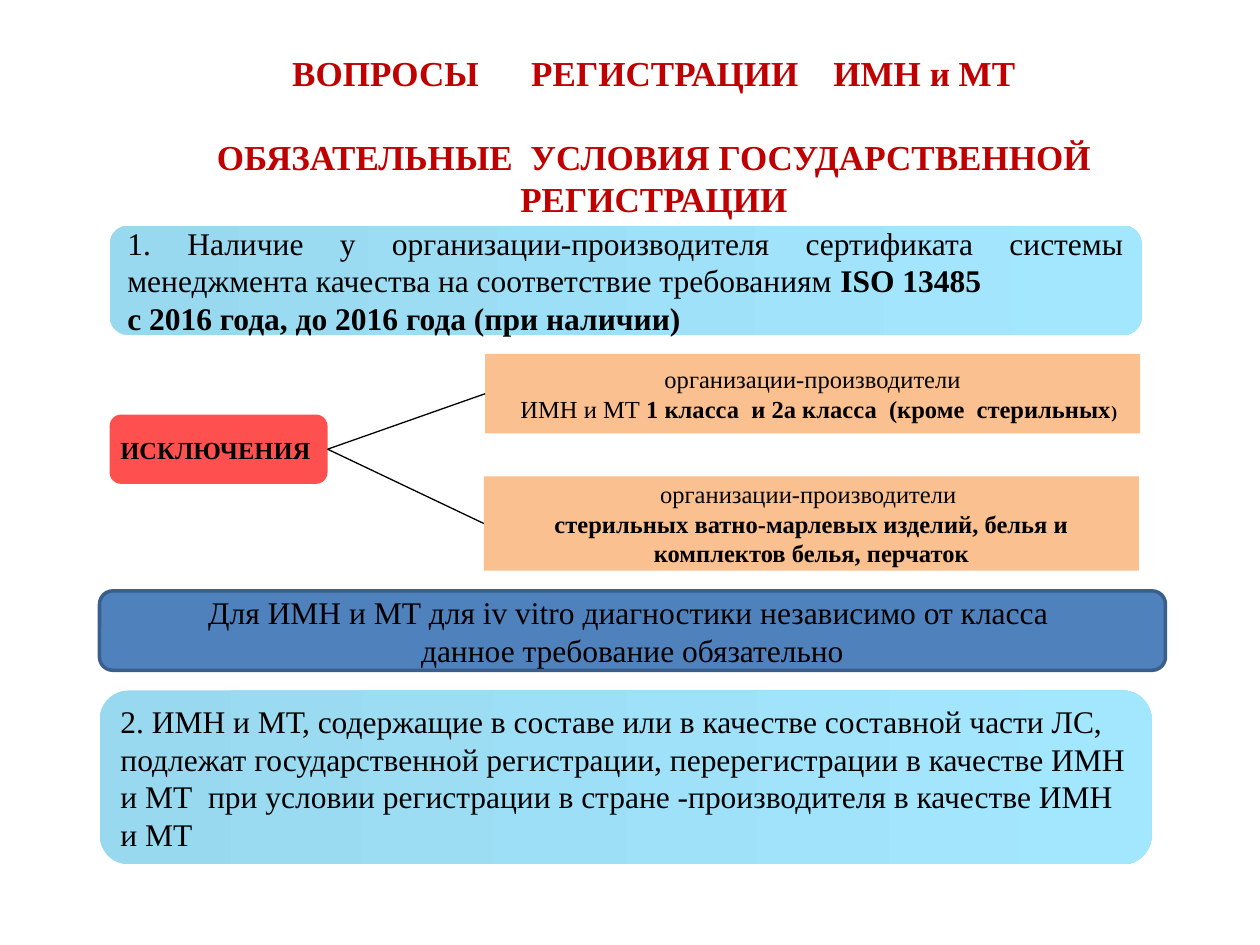
import pptx
import pptx.util
import pptx.dml.color
import pptx.enum.shapes
import pptx.enum.text
import pptx.oxml.ns
import lxml.etree

Inches, Pt = pptx.util.Inches, pptx.util.Pt
RGBColor = pptx.dml.color.RGBColor
MSO_SHAPE = pptx.enum.shapes.MSO_SHAPE
PP_ALIGN = pptx.enum.text.PP_ALIGN
MSO_ANCHOR = pptx.enum.text.MSO_ANCHOR

FONT = "Times New Roman"
BLACK = RGBColor(0x00, 0x00, 0x00)
DARK_RED = RGBColor(0xC0, 0x00, 0x00)
RED = RGBColor(0xFF, 0x50, 0x50)
PEACH = RGBColor(0xFA, 0xC0, 0x90)
BLUE = RGBColor(0x4F, 0x81, 0xBD)
BLUE_LINE = RGBColor(0x3A, 0x5F, 0x8C)
SKY = [RGBColor(0x99, 0xD9, 0xEF), RGBColor(0xA3, 0xE7, 0xFF)]


def write(tf, paragraphs, size, color, align):
    tf.vertical_anchor = MSO_ANCHOR.MIDDLE
    for i, runs in enumerate(paragraphs):
        p = tf.paragraphs[0] if i == 0 else tf.add_paragraph()
        p.alignment = align
        p.font.name = FONT
        p.font.size = Pt(size)
        p.font.color.rgb = color
        for text, bold in runs:
            r = p.add_run()
            r.text = text
            r.font.bold = bold


def add_box(kind, box, fill, paragraphs, size, align=PP_ALIGN.CENTER):
    sp = s.shapes.add_shape(kind, *[Inches(v) for v in box])
    sp.shadow.inherit = False
    sp.line.fill.background()
    if isinstance(fill, list):
        sp.fill.gradient()
        sp.fill.gradient_angle = 0
        for stop, position, color in zip(sp.fill.gradient_stops, (0, 1), fill):
            stop.position = position
            stop.color.rgb = color
    else:
        sp.fill.solid()
        sp.fill.fore_color.rgb = fill
    sp.text_frame.word_wrap = True
    write(sp.text_frame, paragraphs, size, BLACK, align)
    return sp


prs = pptx.Presentation()
prs.slide_width, prs.slide_height = Inches(10), Inches(7.5)
s = prs.slides.add_slide(prs.slide_layouts[5])

title = s.shapes.title
title.left, title.top = Inches(0.86), Inches(0.21)
title.width, title.height = Inches(8.66), Inches(1.73)
tf = title.text_frame
tf.auto_size = pptx.enum.text.MSO_AUTO_SIZE.NONE
write(tf, [
    [("ВОПРОСЫ      РЕГИСТРАЦИИ    ИМН и МТ", True)],
    [("ОБЯЗАТЕЛЬНЫЕ  УСЛОВИЯ ГОСУДАРСТВЕННОЙ РЕГИСТРАЦИИ", True)],
], 20, DARK_RED, PP_ALIGN.CENTER)
tf.paragraphs[0].space_before = Pt(0)
tf.paragraphs[1].space_before = Pt(24)

add_box(MSO_SHAPE.ROUNDED_RECTANGLE, (0.87, 1.79, 8.19, 0.87), SKY, [
    [("1. Наличие у организации-производителя сертификата системы "
      "менеджмента качества на соответствие требованиям ", False),
     ("ISO 13485", True)],
    [("с 2016 года, до 2016 года (при наличии)", True)],
], 18, PP_ALIGN.JUSTIFY)

exceptions = add_box(MSO_SHAPE.ROUNDED_RECTANGLE, (0.87, 3.29, 1.73, 0.55), RED,
                     [[("ИСКЛЮЧЕНИЯ ", True)]], 14)
exceptions.text_frame.word_wrap = False

low_class = add_box(MSO_SHAPE.RECTANGLE, (3.85, 2.81, 5.2, 0.63), PEACH, [
    [("организации-производители", False)],
    [("  ИМН и МТ ", False),
     ("1 класса  и 2а класса  (кроме  стерильных", True), (")", True)],
], 14)
low_class.text_frame.paragraphs[1].runs[-1].font.size = Pt(10)

sterile = add_box(MSO_SHAPE.RECTANGLE, (3.84, 3.78, 5.2, 0.75), PEACH, [
    [("организации-производители ", False)],
    [("стерильных ватно-марлевых изделий, белья и "
      "комплектов белья, перчаток", True)],
], 14)

for target in (low_class, sterile):
    line = s.shapes.add_connector(pptx.enum.shapes.MSO_CONNECTOR.STRAIGHT, 0, 0, 0, 0)
    line.begin_connect(exceptions, 3)
    line.end_connect(target, 1)
    line.line.color.rgb = BLACK
    line.line.width = Pt(0.75)
    lxml.etree.SubElement(line._element.spPr, pptx.oxml.ns.qn("a:effectLst"))

add_box(MSO_SHAPE.ROUNDED_RECTANGLE, (0.79, 5.48, 8.35, 1.38), SKY, [
    [("2. ИМН и МТ, содержащие в составе или в качестве составной части ЛС, "
      "подлежат государственной регистрации, перерегистрации в качестве ИМН "
      "и МТ  при условии регистрации в стране -производителя в качестве ИМН и МТ",
      False)],
], 18, PP_ALIGN.LEFT)

in_vitro = add_box(MSO_SHAPE.ROUNDED_RECTANGLE, (0.79, 4.69, 8.46, 0.63), BLUE, [
    [("Для ИМН и МТ для iv vitro диагностики независимо от класса ", False)],
    [("данное требование обязательно", False)],
], 18)
in_vitro.line.color.rgb = BLUE_LINE
in_vitro.line.width = Pt(2)

prs.save("out.pptx")
